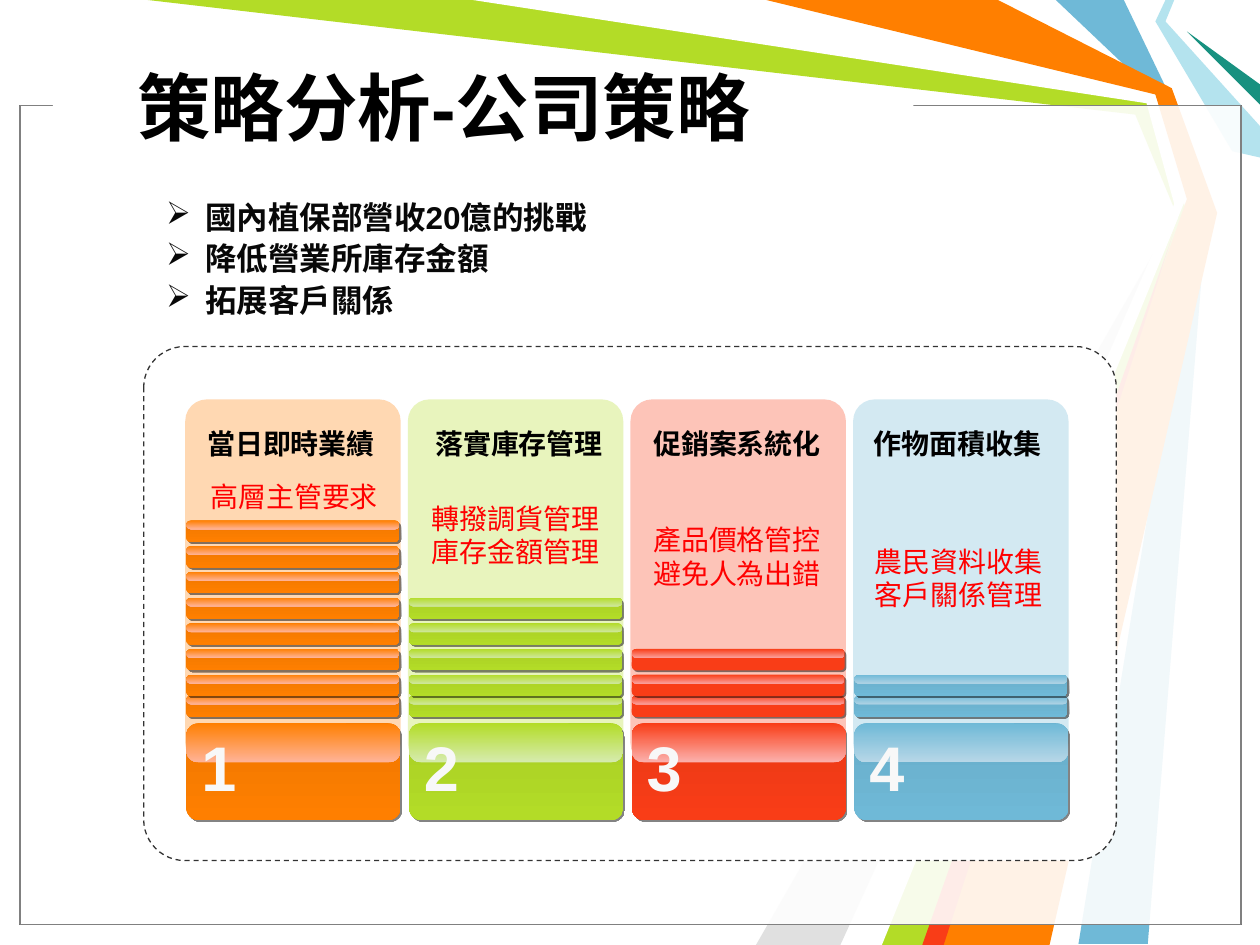
from collections import namedtuple

from lxml import etree
from pptx import Presentation
from pptx import util as u
from pptx.dml.color import RGBColor
from pptx.enum import dml, shapes, text
from pptx.oxml.ns import qn

BLACK = RGBColor(0x00, 0x00, 0x00)
INK = RGBColor(0x08, 0x08, 0x08)
DARK = RGBColor(0x33, 0x33, 0x33)
GRAY = RGBColor(0x80, 0x80, 0x80)
SILVER = RGBColor(0xE0, 0xE0, 0xE0)
PAPER = RGBColor(0xF8, 0xF8, 0xF8)
WHITE = RGBColor(0xFF, 0xFF, 0xFF)
NOTE_RED = RGBColor(0xFF, 0x00, 0x00)
ORANGE = RGBColor(0xFF, 0x7F, 0x00)
ORANGE_DEEP = RGBColor(0xEF, 0x77, 0x00)
ORANGE_PALE = RGBColor(0xFF, 0xB3, 0x98)
LIME = RGBColor(0xB3, 0xDC, 0x27)
LIME_DEEP = RGBColor(0xA8, 0xCE, 0x25)
LIME_PALE = RGBColor(0xD6, 0xEB, 0xAE)
LIME_SHINE = RGBColor(0xCE, 0xE7, 0x9A)
RED = RGBColor(0xF9, 0x3D, 0x17)
RED_DEEP = RGBColor(0xE9, 0x39, 0x16)
RED_PALE = RGBColor(0xFB, 0xB1, 0xAD)
RED_SHINE = RGBColor(0xFB, 0x9E, 0x99)
BLUE = RGBColor(0x6F, 0xB9, 0xD7)
BLUE_DEEP = RGBColor(0x68, 0xAD, 0xC9)
BLUE_PALE = RGBColor(0xB7, 0xD7, 0xE7)
BLUE_SHINE = RGBColor(0xAD, 0xD2, 0xE4)
AQUA = RGBColor(0xB4, 0xE3, 0xEE)
TEAL = RGBColor(0x18, 0x91, 0x80)

COLUMNS, ROWS = 100, 75
PITCH = 17.67

Strategy = namedtuple(
    "Strategy", "heading center notes bars color deep pale bar_deep bar_shine")
STRATEGIES = [
    Strategy("當日即時業績", 23.1, ["高層主管要求"], 8,
             ORANGE, ORANGE_DEEP, ORANGE_PALE, ORANGE_DEEP, ORANGE_PALE),
    Strategy("落實庫存管理", 41.2, ["轉撥調貨管理", "庫存金額管理"], 5,
             LIME, LIME_DEEP, LIME_PALE, LIME_DEEP, LIME_SHINE),
    Strategy("促銷案系統化", 58.5, ["產品價格管控", "避免人為出錯"], 3,
             RED, RED_DEEP, RED_PALE, RED, RED_SHINE),
    Strategy("作物面積收集", 76, ["農民資料收集", "客戶關係管理"], 2,
             BLUE, BLUE_DEEP, BLUE_PALE, BLUE_DEEP, BLUE_SHINE),
]

RIBBONS = [
    (BLUE, [(89.2, 0), (92.9, 7.7), (95.8, 16.7), (91.1, 74.9), (85.6, 74.9),
            (95, 16.7), (91.7, 7.5), (83.8, 0)]),
    (LIME, [(11.7, 0), (38.3, 0), (91.4, 7.8), (94.2, 16.9), (74.2, 75),
            (69.2, 75), (93.5, 17.3), (90.1, 9.1)]),
    (SILVER, [(66.7, 75), (92.7, 18.1), (60, 75)]),
    (WHITE, [(37.5, 0), (91, 8.2), (93.2, 16.2), (67.5, 75), (70, 75),
             (94.1, 15.8), (91.7, 7.5), (60, 0)]),
    (AQUA, [(92.5, 0), (91.7, 1.7), (97.8, 12), (100, 12.5), (100, 10),
            (92.5, 1.7), (93.2, 0)]),
    (TEAL, [(100, 8.3), (94.2, 2.5), (100, 6.7)]),
    (ORANGE, [(60.8, 0), (79.2, 0), (93, 7), (96.6, 16.9), (83.3, 75),
              (73.3, 75), (94.2, 15.8), (91.7, 7.5)]),
    (RED, [(73.2, 75), (93.2, 18.3), (74.9, 75)]),
]


class Canvas:
    font_name = "Arial"

    def __init__(self, presentation):
        self.column = presentation.slide_width / COLUMNS
        self.row = presentation.slide_height / ROWS
        self.slide = presentation.slides.add_slide(presentation.slide_layouts[6])

    def point(self, x, y):
        return round(x * self.column), round(y * self.row)

    def box(self, left, top, width, height):
        return self.point(left, top) + self.point(width, height)

    def ribbon(self, color, points):
        start, *rest = [self.point(*point) for point in points]
        builder = self.slide.shapes.build_freeform(*start)
        builder.add_line_segments(rest, close=True)
        shape = builder.convert_to_shape()
        shape.shadow.inherit = False
        shape.fill.solid()
        shape.fill.fore_color.rgb = color
        shape.line.fill.background()

    def panel(self, area, colors, radius=None, opacity=None, line=None,
              dash=None, shadow=False):
        kind = shapes.MSO_SHAPE.RECTANGLE
        if radius is not None:
            kind = shapes.MSO_SHAPE.ROUNDED_RECTANGLE
        shape = self.slide.shapes.add_shape(kind, *self.box(*area))
        shape.shadow.inherit = False
        if radius is not None:
            shape.adjustments[0] = radius
        if len(colors) == 1:
            shape.fill.solid()
            shape.fill.fore_color.rgb = colors[0]
        else:
            shape.fill.gradient()
            shape.fill.gradient_angle = 270
            for stop, color in zip(shape.fill.gradient_stops, colors):
                stop.color.rgb = color
        properties = shape.element.spPr
        if opacity is not None:
            color = properties.find(".//" + qn("a:srgbClr"))
            etree.SubElement(color, qn("a:alpha"), val=str(opacity * 1000))
        if line is None:
            shape.line.fill.background()
        else:
            shape.line.color.rgb = line
            shape.line.width = u.Pt(0.75)
            if dash:
                shape.line.dash_style = dash
        if shadow:
            self.cast_shadow(properties.find(qn("a:effectLst")), 50)

    def cast_shadow(self, effects, opacity):
        outer = etree.SubElement(effects, qn("a:outerShdw"), blurRad="0",
                                 dist=str(u.Pt(1.4)), dir="2700000", algn="ctr")
        color = etree.SubElement(outer, qn("a:srgbClr"), val=str(INK))
        etree.SubElement(color, qn("a:alpha"), val=str(opacity * 1000))

    def text(self, area, lines, size, color, bold=False, centered=True,
             middle=False, bullet=None, spacing=None, shadow=False):
        frame = self.slide.shapes.add_textbox(*self.box(*area)).text_frame
        frame.word_wrap = True
        if middle:
            frame.vertical_anchor = text.MSO_ANCHOR.MIDDLE
        else:
            frame.auto_size = text.MSO_AUTO_SIZE.SHAPE_TO_FIT_TEXT
        frame.text = "\n".join(lines)
        for paragraph in frame.paragraphs:
            if centered:
                paragraph.alignment = text.PP_ALIGN.CENTER
            if spacing:
                paragraph.line_spacing = spacing
            if bullet:
                properties = paragraph._p.get_or_add_pPr()
                indent = u.Inches(0.31)
                properties.set("marL", str(indent))
                properties.set("indent", str(-indent))
                etree.SubElement(properties, qn("a:buChar"), char=bullet)
            paragraph.font.name = self.font_name
            paragraph.font.size = u.Pt(size)
            paragraph.font.bold = bold
            paragraph.font.color.rgb = color
            if shadow:
                run_properties = paragraph.runs[0]._r.get_or_add_rPr()
                self.cast_shadow(
                    etree.SubElement(run_properties, qn("a:effectLst")), 100)

    def block(self, area, strategy, gloss_height, radius, gloss_radius, deep, pale):
        left, top, width, _ = area
        colors = [strategy.color] if deep == strategy.color else [deep, strategy.color]
        self.panel(area, colors, radius, shadow=True)
        self.panel((left, top, width, gloss_height), [strategy.color, pale],
                   gloss_radius)

    def strategy(self, index, strategy):
        offset = index * PITCH
        self.panel((14.7 + offset, 31.7, 17.1, 29), [strategy.color], 0.1, opacity=30)
        self.block((14.8 + offset, 57.4, 17, 7.7), strategy, 3.1, 0.13, 0.31,
                   strategy.deep, strategy.pale)
        self.text((strategy.center - 8.2, 33.4, 16.4, 3.7), [strategy.heading],
                  16, BLACK, bold=True)
        self.text((15 + offset, 57.3, 4, 7), [str(index + 1)], 36, PAPER,
                  bold=True, shadow=True)
        for level in range(strategy.bars):
            top = 55.2 if level == 0 else 53.55 - 2.04 * (level - 1)
            self.block((14.8 + offset, top, 16.9, 1.7), strategy, 0.7, 0.21, 0.5,
                       strategy.bar_deep, strategy.bar_shine)
        self.text((14.9 + 17.57 * index, 37.6 + 1.7 * index, 16.9, 3.7),
                  strategy.notes, 16, NOTE_RED)


def main():
    presentation = Presentation()
    presentation.slide_width = u.Inches(10)
    presentation.slide_height = u.Inches(7.5)
    canvas = Canvas(presentation)
    for color, points in RIBBONS:
        canvas.ribbon(color, points)
    for line in (BLACK, GRAY):
        canvas.panel((1.6, 8.4, 96.9, 65), [WHITE], opacity=69, line=line)
    canvas.panel((4.2, 7.4, 68.3, 1.7), [WHITE])
    canvas.text((9.9, 2.2, 68.9, 12.5), ["策略分析-公司策略"], 42, BLACK,
                bold=True, centered=False, middle=True)
    canvas.panel((11.4, 27.5, 77.2, 40.8), [WHITE], 0.08, line=DARK,
                 dash=dml.MSO_LINE.DASH)
    canvas.text((12.2, 14.9, 55.8, 11),
                ["國內植保部營收20億的挑戰", "降低營業所庫存金額", "拓展客戶關係"],
                18, INK, bold=True, centered=False, bullet="➢", spacing=1.1)
    for index, strategy in enumerate(STRATEGIES):
        canvas.strategy(index, strategy)
    presentation.save("out.pptx")


if __name__ == "__main__":
    main()
